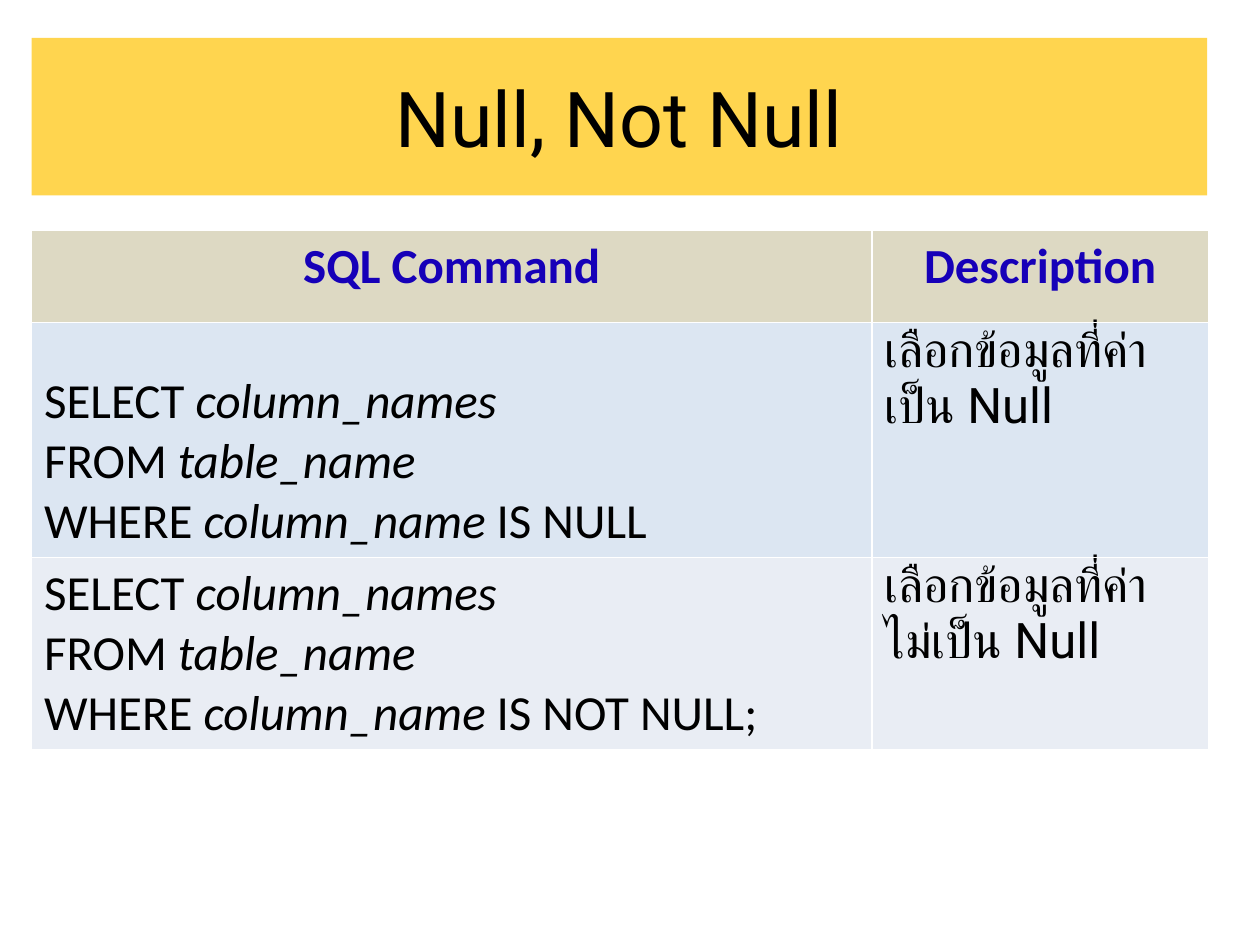
from pptx import Presentation
from pptx.dml.color import RGBColor
from pptx.enum.text import MSO_ANCHOR, PP_ALIGN
from pptx.util import Inches, Pt

COLORS = {
    "title_fill": "FFD54F",
    "header_fill": "DDD9C3",
    "header_text": "1600B8",
    "null_row": "DCE6F2",
    "not_null_row": "E9EDF4",
    "text": "000000",
}
LEFT, WIDTH = Inches(0.25), Inches(9.33)
COLUMN_WIDTHS = (6.67, 2.67)
ROW_HEIGHTS = (0.73, 1.42, 1.47)
HEADERS = ("SQL Command", "Description")
# condition, description, row colour, top margin of the command
ROWS = (
    (" IS NULL", "เลือกข้อมูลที่ค่า เป็น Null", "null_row", 0.39),
    (" IS NOT NULL;", "เลือกข้อมูลที่ค่า ไม่เป็น Null", "not_null_row", 0.05),
)


def set_fill(shape, color):
    shape.fill.solid()
    shape.fill.fore_color.rgb = RGBColor.from_string(COLORS[color])


def set_font(paragraph, name, size, color="text", bold=False):
    font = paragraph.font
    font.name, font.size, font.bold = name, Pt(size), bold
    font.color.rgb = RGBColor.from_string(COLORS[color])


def add_title(slide, text):
    title = slide.shapes.title
    title.left, title.top = LEFT, Inches(0.3)
    title.width, title.height = WIDTH, Inches(1.25)
    set_fill(title, "title_fill")
    frame = title.text_frame
    frame.text = text
    frame.vertical_anchor = MSO_ANCHOR.MIDDLE
    paragraph = frame.paragraphs[0]
    paragraph.alignment = PP_ALIGN.CENTER
    set_font(paragraph, "Roboto", 44)


def fill_header(cell, text):
    set_fill(cell, "header_fill")
    cell.text = text
    paragraph = cell.text_frame.paragraphs[0]
    paragraph.alignment = PP_ALIGN.CENTER
    set_font(paragraph, "Calibri", 28, "header_text", bold=True)


def fill_command(cell, condition, color, top_margin):
    """Write a SELECT statement with its identifiers in italics."""
    set_fill(cell, color)
    cell.margin_top = Inches(top_margin)
    paragraph = cell.text_frame.paragraphs[0]
    set_font(paragraph, "Calibri", 28)
    clauses = (
        ("SELECT ", "column_names", ""),
        ("FROM ", "table_name", ""),
        ("WHERE ", "column_name", condition),
    )
    for index, (keyword, identifier, ending) in enumerate(clauses):
        if index:
            paragraph.add_line_break()
        for text, italic in ((keyword, False), (identifier, True), (ending, False)):
            if text:
                run = paragraph.add_run()
                run.text = text
                run.font.italic = italic


def fill_description(cell, text, color):
    set_fill(cell, color)
    cell.text = text
    set_font(cell.text_frame.paragraphs[0], "Roboto", 28)


def add_command_table(slide):
    frame = slide.shapes.add_table(
        len(ROW_HEIGHTS), len(COLUMN_WIDTHS), LEFT, Inches(1.83), WIDTH, Inches(4.06)
    )
    table = frame.table
    for column, width in zip(table.columns, COLUMN_WIDTHS):
        column.width = Inches(width)
    for row, height in zip(table.rows, ROW_HEIGHTS):
        row.height = Inches(height)
    frame.height = Inches(4.06)
    for index, header in enumerate(HEADERS):
        fill_header(table.cell(0, index), header)
    for index, (condition, description, color, top_margin) in enumerate(ROWS, start=1):
        fill_command(table.cell(index, 0), condition, color, top_margin)
        fill_description(table.cell(index, 1), description, color)


def main():
    presentation = Presentation()
    presentation.slide_width, presentation.slide_height = Inches(10), Inches(7.5)
    slide = presentation.slides.add_slide(presentation.slide_layouts[5])
    add_title(slide, "Null, Not Null")
    add_command_table(slide)
    presentation.save("out.pptx")


if __name__ == "__main__":
    main()
